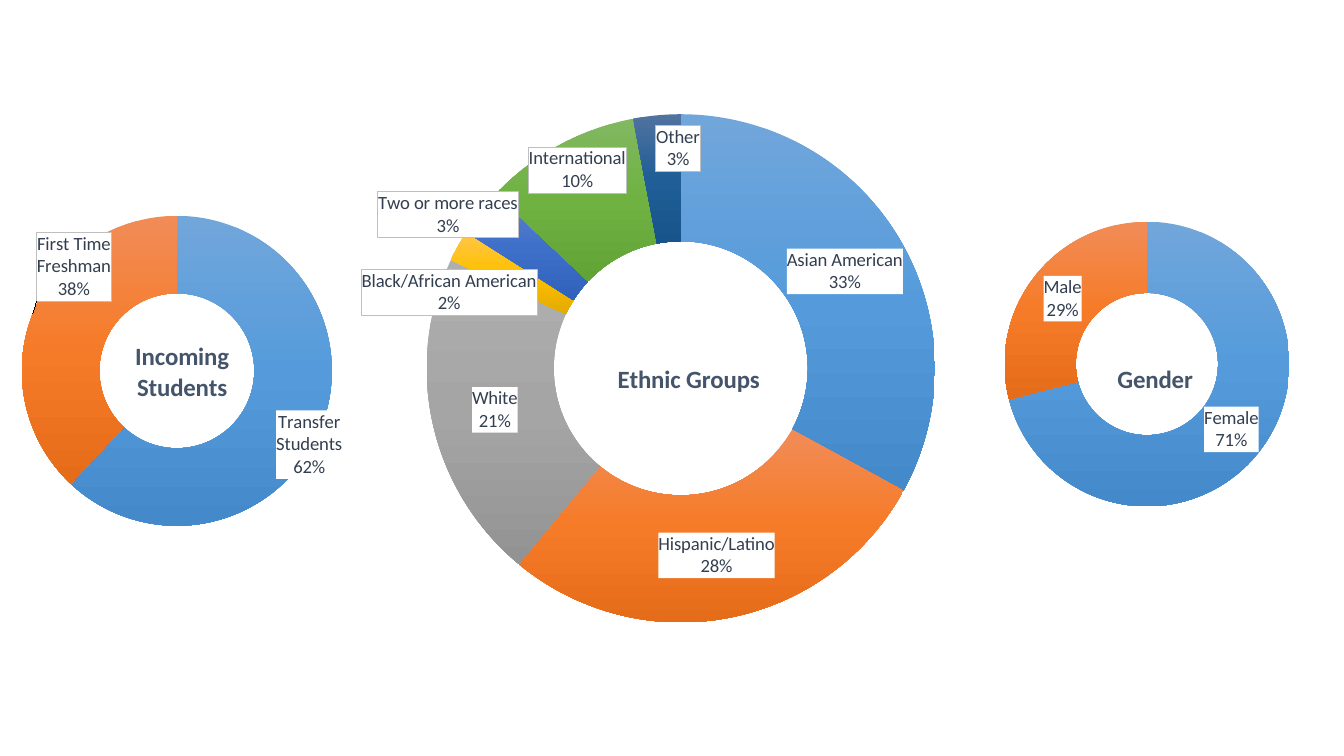
from copy import deepcopy

from lxml import etree
from pptx import Presentation
from pptx import util as u
from pptx.chart.data import CategoryChartData
from pptx.dml.color import RGBColor
from pptx.enum import chart as ch
from pptx.oxml import parse_xml
from pptx.oxml.ns import nsdecls, qn

WHITE = RGBColor(0xFF, 0xFF, 0xFF)
BLACK = RGBColor(0, 0, 0)
SLATE = RGBColor(0x44, 0x54, 0x6A)
INK = RGBColor(0x33, 0x3F, 0x50)
EDGE = RGBColor(0xBF, 0xBF, 0xBF)
# Top, middle and bottom colour of each slice
SHADES = [[RGBColor.from_string(c) for c in row.split()] for row in (
    "71A6DB 559BDB 448ACA",
    "F18C57 F67B28 E56C19",
    "AFAFAF A5A5A5 939393",
    "FFC64B FFC000 E3AB00",
    "6183CB 3E70CA 3062BB",
    "81B861 6FB242 62A336",
    "51739F 205E97 17548B",
)]

# box: chart frame; ring: left, top, size; head: left, top of the title
# moves: slice number -> shift of its label and whether it has an edge
RINGS = [
    dict(name="Gender", lines=["Gender"], box=(10.38, 2.63, 6.87, 4.51),
         ring=(11.96, 2.64, 3.39), head=(13.25, 4.26),
         data={"Female": 71, "Male": 29}, moves={}),
    dict(name="Ethnic Groups", lines=["Ethnic Groups"],
         box=(2.77, 0.48, 10.67, 7.11),
         ring=(5.08, 1.36, 6.05), head=(7.3, 4.26),
         data={"Asian American": 33, "Hispanic/Latino": 28, "White": 21,
               "Black/African American": 2, "Two or more races": 3,
               "International": 10, "Other": 3},
         moves={3: (-0.77, 0.19, True), 4: (-0.98, -0.44, True),
                5: (-0.14, -0.37, True), 6: (0.18, -0.36, True)}),
    dict(name="Series 1", lines=["Incoming", "Students"],
         box=(-1.26, 1.39, 6.75, 5.06),
         ring=(0.26, 2.57, 3.69), head=(1.58, 4.02),
         data={"Transfer Students": 62, "First Time Freshman": 38},
         moves={0: (0.29, 0.37, False), 1: (0.06, -0.73, True)}),
]


def style(font, **vals):
    for key, val in vals.items():
        if key == "rgb":
            font.color.rgb = val
        else:
            setattr(font, key, val)


def layout(**vals):
    """Manual layout element; values are fractions of the chart frame."""
    inner = '<c:layoutTarget val="inner"/>' if "w" in vals else ""
    if vals.pop("fixed", False):
        inner += '<c:xMode val="edge"/><c:yMode val="edge"/>'
    inner += "".join(f'<c:{k} val="{v:.4f}"/>' for k, v in vals.items())
    return parse_xml(f'<c:layout {nsdecls("c")}><c:manualLayout>{inner}'
                     '</c:manualLayout></c:layout>')


def swap(parent, new, at):
    for old in parent.findall(qn("c:layout")):
        parent.remove(old)
    parent.insert(at, new)


def paint(chart, count):
    points = chart.plots[0].series[0].points
    for i in range(count):
        fill = points[i].format.fill
        fill.gradient()
        fill.gradient_angle = 270
        points[i].format.line.fill.background()
    for stops in chart._chartSpace.xpath(".//c:dPt//a:gsLst"):
        stops.append(deepcopy(stops[-1]))
    for i in range(count):
        stops = points[i].format.fill.gradient_stops
        for stop, rgb, pos in zip(stops, SHADES[i], (0, 0.5, 1)):
            stop.color.rgb = rgb
            stop.position = pos


def plate(edge):
    """White backing of a label, with or without an edge."""
    line = (f'<a:ln w="9525"><a:solidFill><a:srgbClr val="{EDGE}"/>'
            '</a:solidFill></a:ln>' if edge else '<a:ln><a:noFill/></a:ln>')
    return parse_xml(f'<c:spPr {nsdecls("c", "a")}><a:solidFill>'
                     f'<a:srgbClr val="{WHITE}"/></a:solidFill>{line}</c:spPr>')


def tag(plot, size, moves):
    plot.has_data_labels = True
    labels = plot.data_labels
    flags = dict(show_percentage=True, show_category_name=True,
                 show_value=False, show_legend_key=False,
                 number_format="0%", number_format_is_linked=False)
    for key, val in flags.items():
        setattr(labels, key, val)
    style(labels.font, size=u.Pt(16), name="Calibri", rgb=INK)
    root = labels._element
    root.find(qn("c:txPr")).addprevious(plate(False))
    for old in root.findall(qn("c:separator")):
        root.remove(old)
    mark = etree.Element(qn("c:separator"))
    mark.text = "\n"
    last = root.find(qn("c:showBubbleSize"))
    if last is None:
        last = etree.Element(qn("c:showBubbleSize"), val="0")
        root.find(qn("c:showPercent")).addnext(last)
    last.addnext(mark)
    keep = ("numFmt", "txPr", "showLegendKey", "showVal", "showCatName",
            "showSerName", "showPercent", "showBubbleSize", "separator")
    parts = [p for p in root if etree.QName(p).localname in keep]
    for i, (idx, (dx, dy, edge)) in enumerate(moves.items()):
        item = etree.Element(qn("c:dLbl"))
        etree.SubElement(item, qn("c:idx"), val=str(idx))
        item.append(layout(x=dx / size[0], y=dy / size[1]))
        item.extend(deepcopy(p) for p in parts)
        item.find(qn("c:txPr")).addprevious(plate(edge))
        root.insert(i, item)
    # Labels belong to the series, ahead of its categories
    plot.series[0]._element.find(qn("c:cat")).addprevious(root)


def donut(slide, name, lines, box, ring, head, data, moves):
    left, top, wide, high = box
    table = CategoryChartData()
    table.categories = list(data)
    table.add_series(name, list(data.values()))
    chart = slide.shapes.add_chart(ch.XL_CHART_TYPE.DOUGHNUT,
                                   *map(u.Inches, box), table).chart
    style(chart.font, size=u.Pt(10), name="Calibri", rgb=BLACK)
    chart.has_legend = False
    plot = chart.plots[0]
    plot.vary_by_categories = True
    plot._element.find(qn("c:holeSize")).set("val", "75")
    paint(chart, len(data))
    tag(plot, (wide, high), moves)

    chart.has_title = True
    title = chart.chart_title
    frame = title.text_frame
    frame.text = "\n".join(lines)
    for para in frame.paragraphs:
        style(para.font, size=u.Pt(21.3), bold=True, name="Calibri", rgb=SLATE)
    x, y = head
    swap(title._element,
         layout(fixed=True, x=(x - left) / wide, y=(y - top) / high), 1)
    title._element.find(qn("c:overlay")).set("val", "1")
    x, y, size = ring
    swap(chart._chartSpace.chart.plotArea,
         layout(fixed=True, x=(x - left) / wide, y=(y - top) / high,
                w=size / wide, h=size / high), 0)


def main():
    deck = Presentation()
    deck.slide_width, deck.slide_height = u.Inches(16), u.Inches(9)
    slide = deck.slides.add_slide(deck.slide_layouts[6])
    for ring in RINGS:
        donut(slide, **ring)
    deck.save("out.pptx")


if __name__ == "__main__":
    main()
